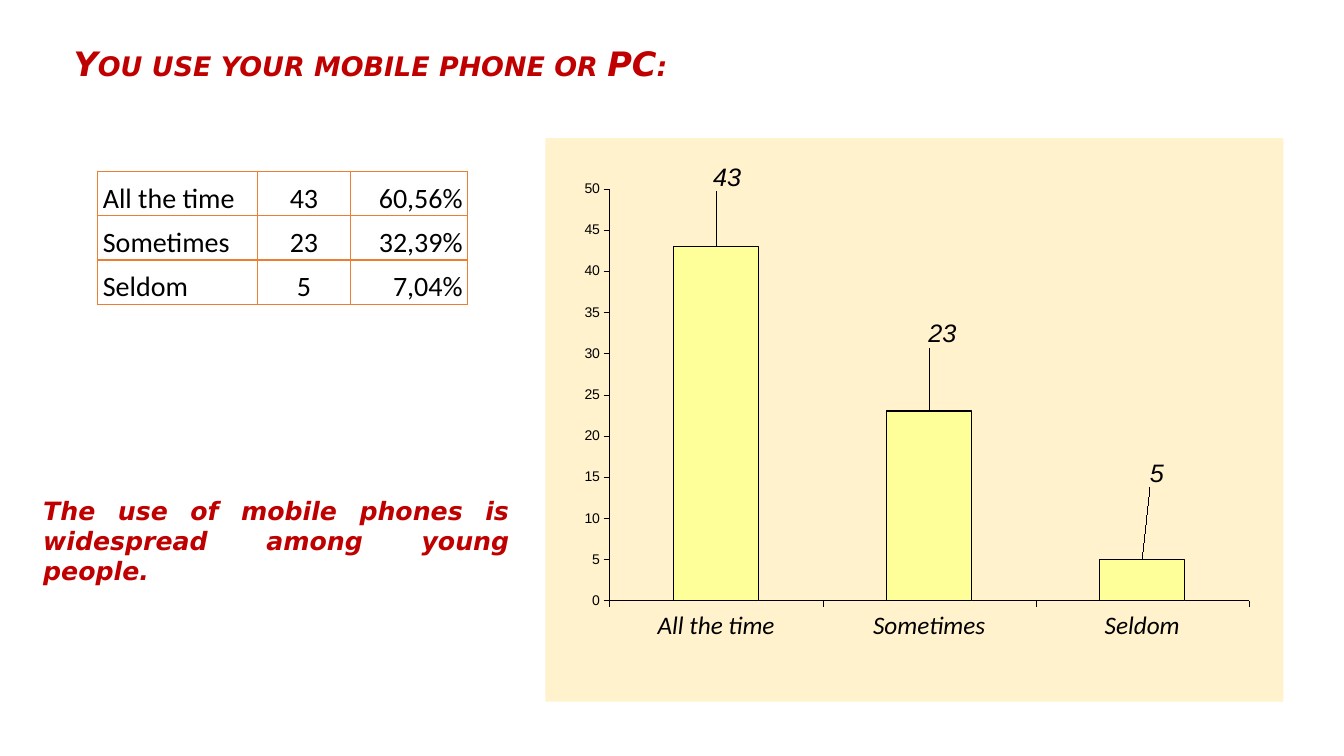
import pptx
import pptx.chart.data
import pptx.dml.color
import pptx.enum.chart
import pptx.enum.text
import pptx.oxml
import pptx.oxml.ns
import pptx.util
from pptx.util import Inches

RED = pptx.dml.color.RGBColor(0xC0, 0x00, 0x00)
BLACK = pptx.dml.color.RGBColor(0x00, 0x00, 0x00)
ORANGE = pptx.dml.color.RGBColor(0xED, 0x7D, 0x31)
CREAM = pptx.dml.color.RGBColor(0xFF, 0xF2, 0xCC)
YELLOW = pptx.dml.color.RGBColor(0xFF, 0xFF, 0x99)

ALIGN = pptx.enum.text.PP_ALIGN
ANCHOR = pptx.enum.text.MSO_ANCHOR
NAMESPACES = pptx.oxml.ns.nsdecls("a", "c")

ANSWERS = [("All the time", 43, "60,56%"),
           ("Sometimes", 23, "32,39%"),
           ("Seldom", 5, "7,04%")]
LABEL_SHIFTS = [(0.015, -0.09), (0.018, -0.105), (0.02, -0.12)]


def manual_layout(x, y, size=None):
    """Return a c:layout element: an offset, or an inner plot frame when size is given."""
    target = modes = extent = ""
    if size:
        target = '<c:layoutTarget val="inner"/>'
        modes = '<c:xMode val="edge"/><c:yMode val="edge"/>'
        extent = f'<c:w val="{size[0]}"/><c:h val="{size[1]}"/>'
    return pptx.oxml.parse_xml(
        f'<c:layout {NAMESPACES}><c:manualLayout>{target}{modes}'
        f'<c:x val="{x}"/><c:y val="{y}"/>{extent}</c:manualLayout></c:layout>')


class SurveySlide:
    heading_font = "DejaVu Sans"
    body_font = "Calibri"
    number_font = "Arial"

    def __init__(self, presentation):
        self.slide = presentation.slides.add_slide(presentation.slide_layouts[5])

    def style(self, font, name, size, color=BLACK, bold=False, italic=False):
        font.name, font.size = name, pptx.util.Pt(size)
        font.color.rgb = color
        font.bold, font.italic = bold, italic

    def title(self, text, left, top, width, height):
        shape = self.slide.shapes.title
        shape.left, shape.top, shape.width, shape.height = left, top, width, height
        frame = shape.text_frame
        frame.text = text
        frame.word_wrap = True
        frame.auto_size = pptx.enum.text.MSO_AUTO_SIZE.NONE
        frame.vertical_anchor = ANCHOR.TOP
        paragraph = frame.paragraphs[0]
        paragraph.alignment = ALIGN.LEFT
        paragraph.line_spacing = 0.9
        font = paragraph.runs[0].font
        self.style(font, self.heading_font, 24, RED, bold=True, italic=True)
        paragraph.runs[0]._r.get_or_add_rPr().set("cap", "small")

    def text(self, text, left, top, width, height):
        frame = self.slide.shapes.add_textbox(left, top, width, height).text_frame
        frame.text = text
        frame.word_wrap = True
        paragraph = frame.paragraphs[0]
        paragraph.alignment = ALIGN.JUSTIFY
        self.style(paragraph.runs[0].font, self.heading_font, 18, RED,
                   bold=True, italic=True)

    def table(self, rows, left, top, column_widths, row_height):
        table = self.slide.shapes.add_table(
            len(rows), len(column_widths), left, top,
            sum(column_widths), row_height * len(rows)).table
        table.first_row = table.horz_banding = False
        for column, width in zip(table.columns, column_widths):
            column.width = width
        for row, values in zip(table.rows, rows):
            row.height = row_height
            alignments = (ALIGN.LEFT, ALIGN.CENTER, ALIGN.RIGHT)
            for cell, value, alignment in zip(row.cells, values, alignments):
                self.cell(cell, str(value), alignment)

    def cell(self, cell, text, alignment):
        cell.text = text
        cell.vertical_anchor = ANCHOR.BOTTOM
        cell.margin_left = cell.margin_right = Inches(0.05)
        cell.margin_top = cell.margin_bottom = 0
        paragraph = cell.text_frame.paragraphs[0]
        paragraph.alignment = alignment
        self.style(paragraph.runs[0].font, self.body_font, 20)
        properties = cell._tc.get_or_add_tcPr()
        for side in ("lnL", "lnR", "lnT", "lnB"):
            properties.append(pptx.oxml.parse_xml(
                f'<a:{side} {NAMESPACES} w="12700"><a:solidFill>'
                f'<a:srgbClr val="{ORANGE}"/></a:solidFill></a:{side}>'))
        cell.fill.background()

    def chart(self, categories, values, left, top, width, height):
        data = pptx.chart.data.CategoryChartData()
        data.categories = categories
        data.add_series("Series 1", values)
        chart = self.slide.shapes.add_chart(
            pptx.enum.chart.XL_CHART_TYPE.COLUMN_CLUSTERED,
            left, top, width, height, data).chart
        chart.has_legend = chart.has_title = False
        self.style(chart.font, self.number_font, 10)
        self.chart_background(chart)
        self.axis(chart.category_axis, self.body_font, 18, italic=True)
        chart.category_axis.tick_label_position = pptx.enum.chart.XL_TICK_LABEL_POSITION.LOW
        self.axis(chart.value_axis, self.number_font, 10)
        chart.value_axis.minimum_scale = 0
        chart.value_axis.maximum_scale = 50
        chart.value_axis.major_unit = 5
        plot = chart.plots[0]
        plot.gap_width = 150
        plot.vary_by_categories = False
        self.bars(plot.series[0])

    def chart_background(self, chart):
        space = chart._chartSpace
        space.find(pptx.oxml.ns.qn("c:chart")).addnext(pptx.oxml.parse_xml(
            f'<c:spPr {NAMESPACES}><a:solidFill><a:srgbClr val="{CREAM}"/></a:solidFill>'
            '<a:ln><a:noFill/></a:ln></c:spPr>'))
        area = space.chart.plotArea
        for layout in area.findall(pptx.oxml.ns.qn("c:layout")):
            area.remove(layout)
        area.insert(0, manual_layout(0.087, 0.09, (0.866, 0.731)))
        area.append(pptx.oxml.parse_xml(f'<c:spPr {NAMESPACES}><a:noFill/></c:spPr>'))

    def axis(self, axis, font_name, size, italic=False):
        axis.has_major_gridlines = False
        axis.major_tick_mark = pptx.enum.chart.XL_TICK_MARK.OUTSIDE
        axis.format.line.color.rgb = BLACK
        axis.format.line.width = pptx.util.Pt(0.25)
        self.style(axis.tick_labels.font, font_name, size, italic=italic)

    def bars(self, series):
        series.format.fill.solid()
        series.format.fill.fore_color.rgb = YELLOW
        series.format.line.color.rgb = BLACK
        series.format.line.width = pptx.util.Pt(1)
        labels = series.data_labels
        labels.show_value = True
        self.style(labels.font, self.number_font, 18, italic=True)
        for index, shift in enumerate(LABEL_SHIFTS):
            label = series.points[index].data_label
            self.style(label.font, self.number_font, 18, italic=True)
            label.position = pptx.enum.chart.XL_LABEL_POSITION.OUTSIDE_END
            identifier = labels._element.findall(pptx.oxml.ns.qn("c:dLbl"))[index][0]
            identifier.addnext(manual_layout(*shift))


def main():
    presentation = pptx.Presentation()
    presentation.slide_width = Inches(13.33)
    presentation.slide_height = Inches(7.5)
    survey = SurveySlide(presentation)
    survey.title("You use your mobile phone or PC:",
                 Inches(0.63), Inches(0.42), Inches(11.88), Inches(0.68))
    survey.text("The use of mobile phones is widespread among young people.",
                Inches(0.33), Inches(4.86), Inches(4.82), Inches(1.01))
    survey.table(ANSWERS, Inches(0.97), Inches(1.7),
                 [Inches(1.58), Inches(0.93), Inches(1.16)], Inches(0.44))
    survey.chart([answer[0] for answer in ANSWERS], [answer[1] for answer in ANSWERS],
                 Inches(5.41), Inches(1.37), Inches(7.32), Inches(5.59))
    presentation.save("out.pptx")


if __name__ == "__main__":
    main()
